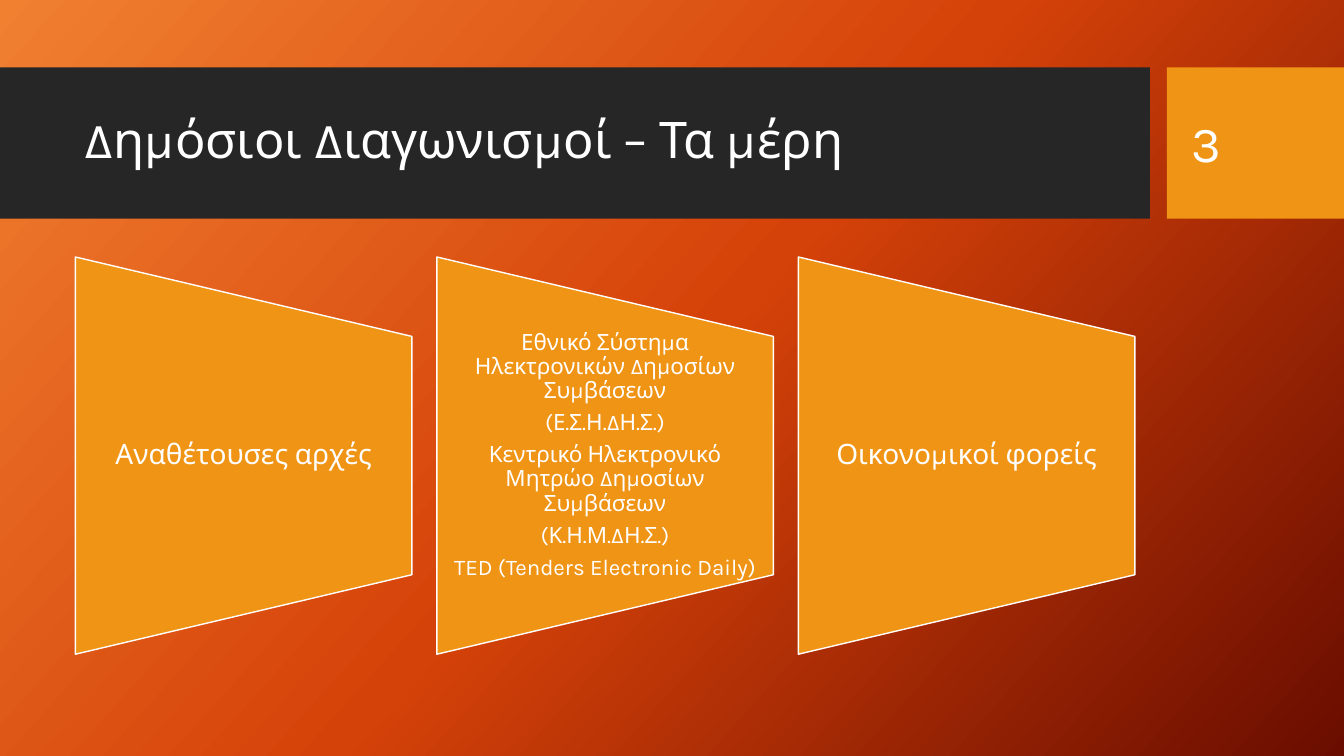
"""Build the slide on the parties to public tenders."""
from copy import deepcopy

from pptx import Presentation
from pptx.dml.color import RGBColor
from pptx.enum import shapes, text
from pptx.oxml import ns
from pptx.util import Cm, Pt

TITLE = "Δημόσιοι Διαγωνισμοί – Τα μέρη"
NUMBER = "3"
PARTIES = [
    {"lines": ["Αναθέτουσες αρχές"], "size": 20, "inset": 0.36},
    {"lines": ["Εθνικό Σύστημα Ηλεκτρονικών Δημοσίων Συμβάσεων",
               "(Ε.Σ.Η.ΔΗ.Σ.)",
               "Κεντρικό Ηλεκτρονικό Μητρώο Δημοσίων Συμβάσεων",
               "(Κ.Η.Μ.ΔΗ.Σ.)",
               "TED (Tenders Electronic Daily)"], "size": 16, "inset": 0.28},
    {"lines": ["Οικονομικοί φορείς"], "size": 20, "inset": 0.36},
]
GRADIENT = [(0, "F18031"), (0.5, "D54209"), (1, "6A0D00")]
FONT, WHITE, DARK, ORANGE = "Karla", "FFFFFF", "262626", "F09415"

SLIDE_WIDTH, SLIDE_HEIGHT = 33.87, 19.05
BAND_TOP, BAND_HEIGHT = 1.7, 3.81
TITLE_BAND_WIDTH, NUMBER_BAND_LEFT = 28.98, 29.41
PARTY_LEFT, PARTY_PITCH = 1.9, 9.11
PARTY_WIDTH, PARTY_HEIGHT, PARTY_MIDDLE = 8.48, 10.01, 11.48
LABEL_HEIGHT = 6


def color(value):
    return RGBColor.from_string(value)


def paint_background(slide):
    fill = slide.background.fill
    fill.gradient()
    fill.gradient_angle = 318
    stop_list = slide.element.find(".//" + ns.qn("a:gsLst"))
    stop_list.append(deepcopy(stop_list[-1]))
    for stop, (position, value) in zip(fill.gradient_stops, GRADIENT):
        stop.position = position
        stop.color.rgb = color(value)


def add_filled(slide, kind, left, top, width, height, fill, line=None):
    shape = slide.shapes.add_shape(kind, Cm(left), Cm(top), Cm(width), Cm(height))
    shape.shadow.inherit = False
    shape.fill.solid()
    shape.fill.fore_color.rgb = color(fill)
    if line:
        shape.line.color.rgb = color(line)
        shape.line.width = Pt(1)
    else:
        shape.line.fill.background()
    return shape


def write(shape, lines, size=36, align=text.PP_ALIGN.LEFT, spacing=1.0, after=0, inset=None):
    frame = shape.text_frame
    frame.word_wrap = True
    frame.auto_size = text.MSO_AUTO_SIZE.NONE
    frame.vertical_anchor = text.MSO_ANCHOR.MIDDLE
    if inset is not None:
        frame.margin_left = frame.margin_right = Cm(inset)
        frame.margin_top = frame.margin_bottom = 0
    frame.text = "\n".join(lines)
    for paragraph in frame.paragraphs:
        paragraph.alignment = align
        paragraph.line_spacing = spacing
        paragraph.space_before = Pt(0)
        paragraph.space_after = Pt(after)
        paragraph.font.size = Pt(size)
        paragraph.font.name = FONT
        paragraph.font.color.rgb = color(WHITE)


def add_header(slide):
    rectangle = shapes.MSO_SHAPE.RECTANGLE
    add_filled(slide, rectangle, 0, BAND_TOP, TITLE_BAND_WIDTH, BAND_HEIGHT, DARK)
    add_filled(slide, rectangle, NUMBER_BAND_LEFT, BAND_TOP,
               SLIDE_WIDTH - NUMBER_BAND_LEFT, BAND_HEIGHT, ORANGE)
    title = slide.shapes.title
    title.left, title.top, title.width, title.height = Cm(1.88), Cm(2.08), Cm(26.7), Cm(3)
    title.element.getparent().append(title.element)
    write(title, [TITLE], spacing=0.9)
    number = slide.shapes.add_textbox(Cm(29.79), Cm(2.08), Cm(3.2), Cm(3.02))
    write(number, [NUMBER])


def add_party(slide, index, party):
    left = PARTY_LEFT + index * PARTY_PITCH
    trapezoid = add_filled(slide, shapes.MSO_SHAPE.FLOWCHART_MANUAL_OPERATION,
                           left - (PARTY_HEIGHT - PARTY_WIDTH) / 2,
                           PARTY_MIDDLE - PARTY_WIDTH / 2,
                           PARTY_HEIGHT, PARTY_WIDTH, ORANGE, WHITE)
    trapezoid.rotation = 270
    label = slide.shapes.add_textbox(Cm(left), Cm(PARTY_MIDDLE - LABEL_HEIGHT / 2),
                                     Cm(PARTY_WIDTH), Cm(LABEL_HEIGHT))
    write(label, party["lines"], size=party["size"], align=text.PP_ALIGN.CENTER,
          spacing=0.9, after=party["size"] * 0.35, inset=party["inset"])


def main():
    presentation = Presentation()
    presentation.slide_width = Cm(SLIDE_WIDTH)
    presentation.slide_height = Cm(SLIDE_HEIGHT)
    slide = presentation.slides.add_slide(presentation.slide_layouts[5])
    paint_background(slide)
    add_header(slide)
    for index, party in enumerate(PARTIES):
        add_party(slide, index, party)
    presentation.save("out.pptx")


if __name__ == "__main__":
    main()
